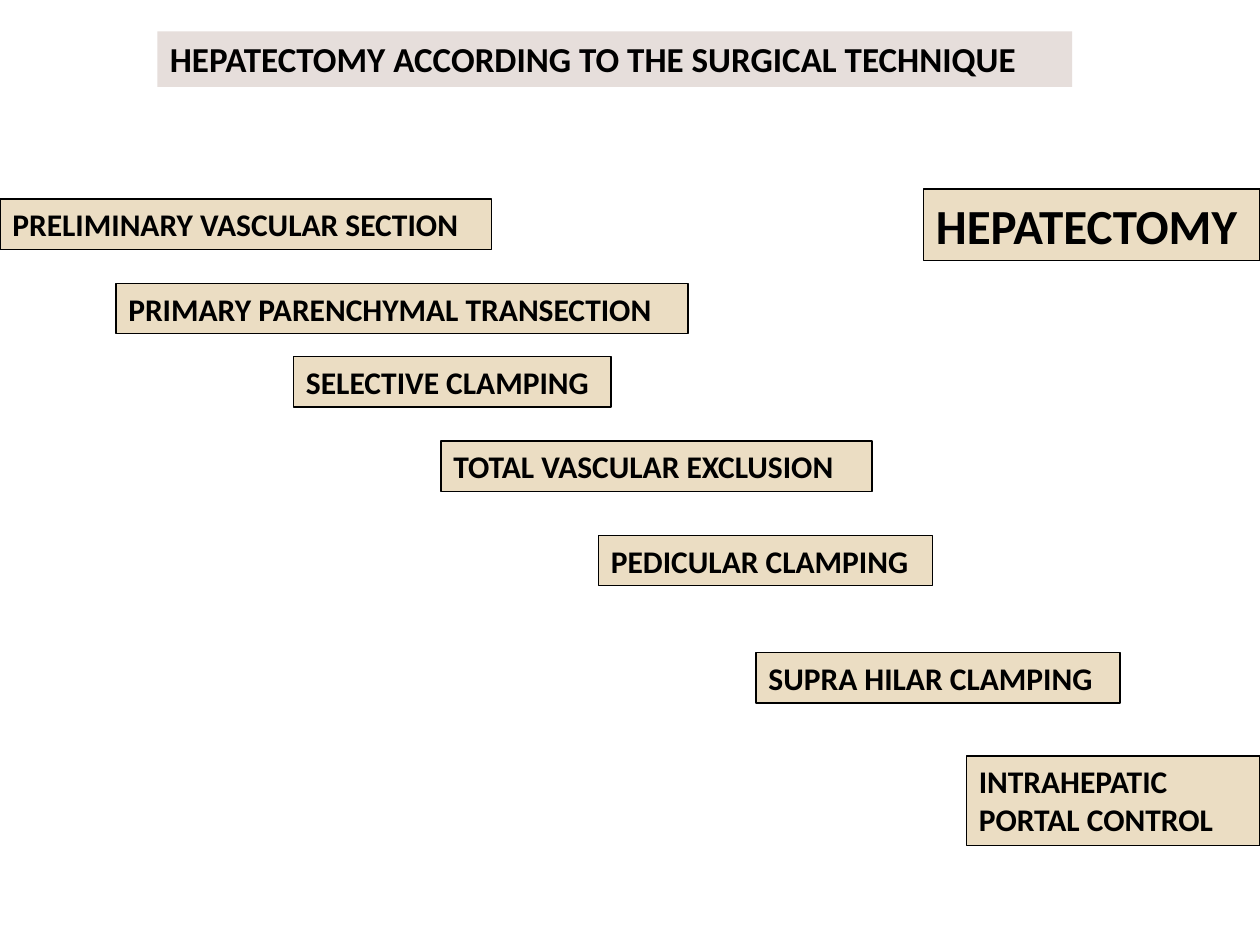
from dataclasses import dataclass
from pptx import Presentation
from pptx.dml.color import RGBColor as Rgb
from pptx.enum.text import MSO_AUTO_SIZE as Fit
from pptx.util import Inches, Pt


@dataclass(frozen=True)
class Theme:
    font: str = "Calibri"
    ink: str = "000000"
    rose: str = "E6DEDB"
    sand: str = "EBDDC3"
    title: int = 20
    head: int = 28
    body: int = 18
    edge: float = 0.75


class Deck:
    """Draws styled labels on the current slide."""

    def __init__(self, theme):
        self.theme = theme
        self.prs = Presentation()
        self.prs.slide_width = Inches(10)
        self.prs.slide_height = Inches(7.5)
        self.slide = self.prs.slides.add_slide(self.prs.slide_layouts[6])

    def label(self, text, left, top, width, height, size, fill):
        box = self.slide.shapes.add_textbox(
            Inches(left), Inches(top), Inches(width), Inches(height))
        box.fill.solid()
        box.fill.fore_color.rgb = Rgb.from_string(fill)
        frame = box.text_frame
        frame.word_wrap = True
        frame.auto_size = Fit.SHAPE_TO_FIT_TEXT
        frame.text = text
        font = frame.paragraphs[0].runs[0].font
        font.name = self.theme.font
        font.size = Pt(size)
        font.bold = True
        font.color.rgb = Rgb.from_string(self.theme.ink)
        return box

    def title(self, text, left, top, width, height):
        self.label(text, left, top, width, height,
                   self.theme.title, self.theme.rose)

    def card(self, text, left, top, width, height=0.4, size=None):
        box = self.label(text, left, top, width, height,
                         size or self.theme.body, self.theme.sand)
        box.line.color.rgb = Rgb.from_string(self.theme.ink)
        box.line.width = Pt(self.theme.edge)


STEPS = [
    ("PRELIMINARY VASCULAR SECTION", 0, 1.58, 3.9),
    ("PRIMARY PARENCHYMAL TRANSECTION", 0.92, 2.25, 4.54),
    ("SELECTIVE CLAMPING", 2.33, 2.83, 2.52),
    ("TOTAL VASCULAR EXCLUSION", 3.5, 3.5, 3.42),
    ("PEDICULAR CLAMPING", 4.75, 4.25, 2.65),
    ("SUPRA HILAR CLAMPING", 6, 5.18, 2.89),
    ("INTRAHEPATIC PORTAL CONTROL", 7.67, 6, 2.33, 0.71),
]


def main():
    theme = Theme()
    deck = Deck(theme)
    deck.title("HEPATECTOMY ACCORDING TO THE SURGICAL TECHNIQUE",
               1.25, 0.25, 7.26, 0.44)
    deck.card("HEPATECTOMY", 7.33, 1.5, 2.67, 0.57, theme.head)
    for step in STEPS:
        deck.card(*step)
    deck.prs.save("out.pptx")


if __name__ == "__main__":
    main()
